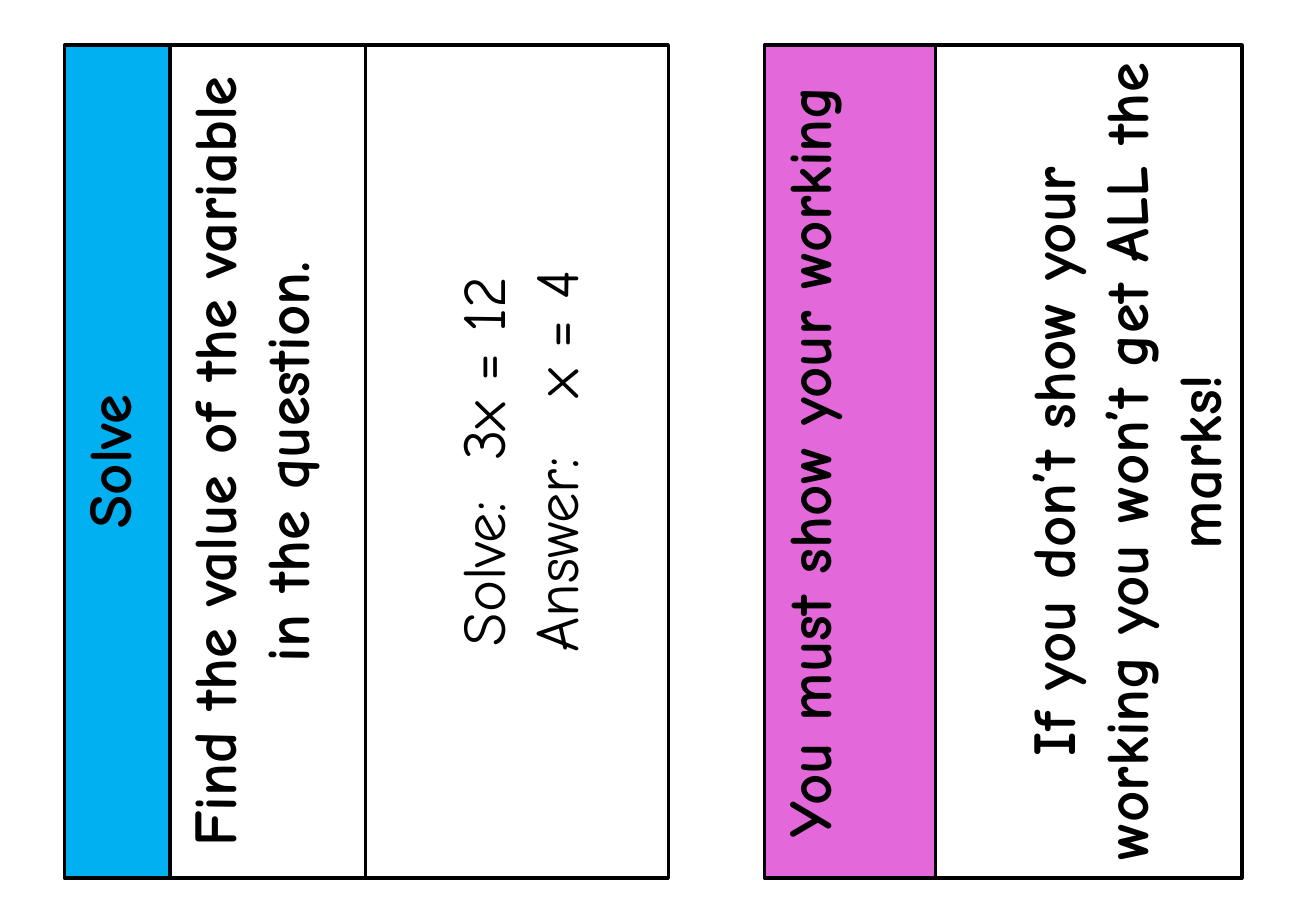
from dataclasses import dataclass

from pptx import Presentation
from pptx.dml.color import RGBColor
from pptx.enum import shapes, text
from pptx.util import Inches, Pt


@dataclass(frozen=True)
class Theme:
    ink: str = "000000"
    paper: str = "FFFFFF"
    blue: str = "00B0F0"
    pink: str = "E369DA"
    font: str = "Comic Neue"
    size: int = 36
    border: int = 2
    inset: float = 0.05
    drop: float = 0.65


class Cards:
    TOP, LENGTH = 0.37, 6.86

    def __init__(self, slide, theme):
        self.slide = slide
        self.theme = theme

    def card(self, panels):
        group = self.slide.shapes.add_group_shape()
        for panel in panels:
            self.panel(group, **panel)

    def panel(self, group, left, width, lines, fill, bold=True, drop=False):
        """Add a strip that reads upwards; left and width are as seen."""
        theme = self.theme
        box = group.shapes.add_shape(
            shapes.MSO_SHAPE.RECTANGLE,
            Inches(left + (width - self.LENGTH) / 2),
            Inches(self.TOP + (self.LENGTH - width) / 2),
            Inches(self.LENGTH), Inches(width))
        box.rotation = 270
        box.shadow.inherit = False
        box.fill.solid()
        box.fill.fore_color.rgb = RGBColor.from_string(fill)
        box.line.color.rgb = RGBColor.from_string(theme.ink)
        box.line.width = Pt(theme.border)

        frame = box.text_frame
        frame.word_wrap = True
        frame.vertical_anchor = text.MSO_ANCHOR.TOP
        frame.margin_top = Inches(theme.drop if drop else theme.inset)
        frame.text = "\n".join(lines)
        for para in frame.paragraphs:
            para.alignment = text.PP_ALIGN.CENTER
            para.font.name = theme.font
            para.font.size = Pt(theme.size)
            para.font.bold = bold
            para.font.color.rgb = RGBColor.from_string(theme.ink)


def main():
    deck = Presentation()
    deck.slide_width, deck.slide_height = Inches(10.83), Inches(7.5)
    theme = Theme()
    cards = Cards(deck.slides.add_slide(deck.slide_layouts[6]), theme)

    cards.card([
        dict(left=1.4, width=1.61, fill=theme.paper,
             lines=["Find the value of the variable in the question."]),
        dict(left=0.53, width=0.87, fill=theme.blue, lines=["Solve"]),
        dict(left=3.01, width=2.49, fill=theme.paper, bold=False, drop=True,
             lines=["Solve:  3x = 12", "Answer:   x = 4"]),
    ])
    cards.card([
        dict(left=6.29, width=1.52, fill=theme.pink,
             lines=["You must show your working"]),
        dict(left=7.7, width=2.52, fill=theme.paper, drop=True,
             lines=["If you don’t show your working you won’t get ALL the marks!"]),
    ])
    deck.save("out.pptx")


if __name__ == "__main__":
    main()
